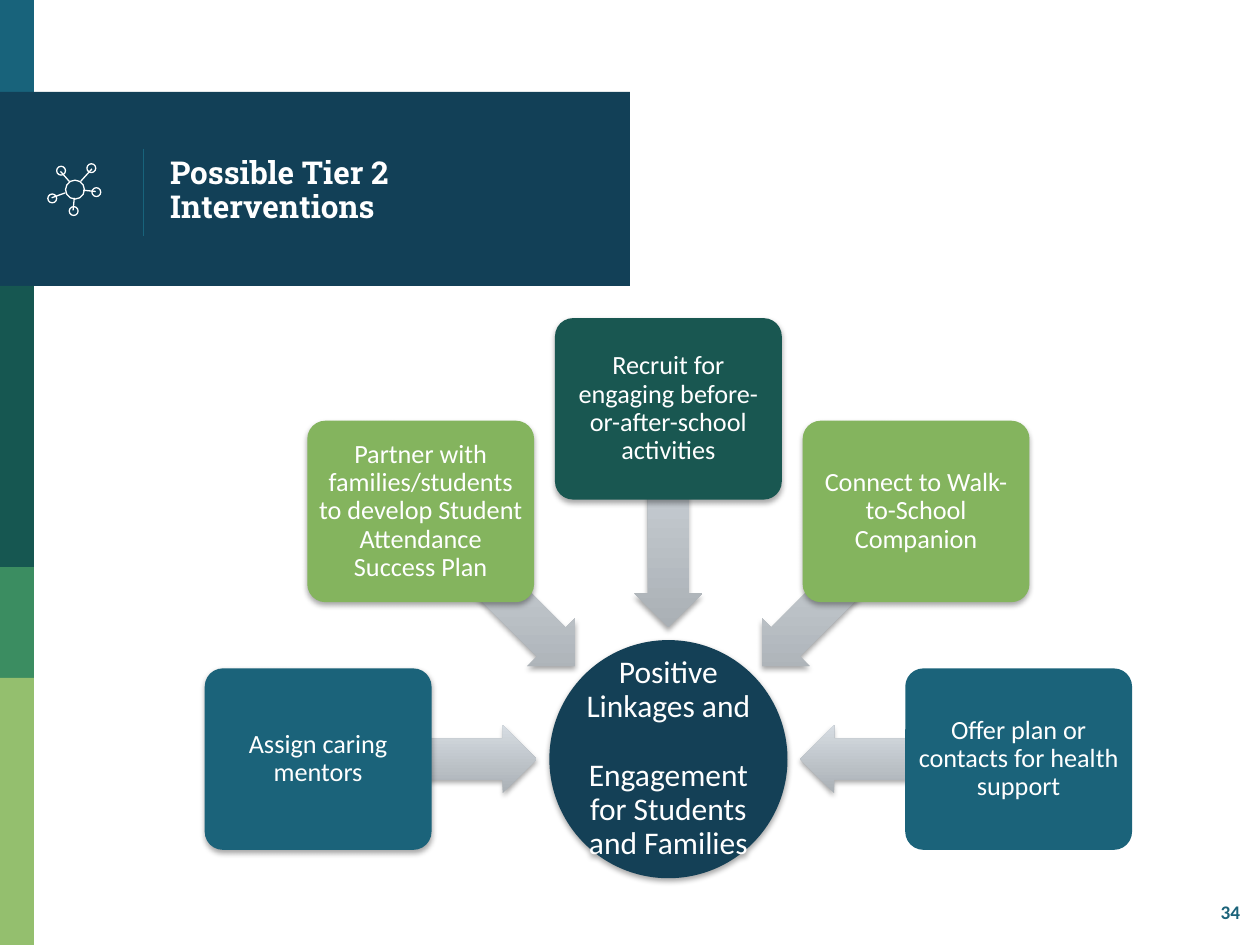
"""Build the slide on possible Tier 2 interventions."""
import math

import lxml.etree
import pptx
import pptx.dml.color
import pptx.enum.shapes
import pptx.enum.text
import pptx.oxml.ns
import pptx.util

Inches = pptx.util.Inches
Kind = pptx.enum.shapes.MSO_SHAPE
Align = pptx.enum.text.PP_ALIGN
Anchor = pptx.enum.text.MSO_ANCHOR
STRAIGHT = pptx.enum.shapes.MSO_CONNECTOR.STRAIGHT

THEME = {
    "navy": "124057", "hub": "144056", "teal": "18637B", "blue": "1B637A",
    "forest": "165751", "pine": "195751", "green": "3B8D61", "lime": "94BF6E",
    "leaf": "84B45E", "white": "FFFFFF", "arrow": ("AAB0B5", "D6DCE2"),
    "body_font": "Calibri", "title_font": "Roboto Slab",
    "large": 18, "medium": 15, "small": 11, "line": 0.75,
}


def rgb(name):
    return pptx.dml.color.RGBColor.from_string(THEME.get(name, name))


def write(shape, paragraphs, size, inset, color="white", font="body_font",
          bold=False, align=Align.CENTER, gap=0):
    frame = shape.text_frame
    frame.text = "\n".join(paragraphs)
    sides = ("left", "right", "top", "bottom")
    frame_format = {f"margin_{side}": Inches(inset) for side in sides}
    frame_format.update(word_wrap=True, vertical_anchor=Anchor.MIDDLE,
                        auto_size=pptx.enum.text.MSO_AUTO_SIZE.NONE)
    for name, value in frame_format.items():
        setattr(frame, name, value)
    font_format = {"name": THEME[font], "size": pptx.util.Pt(THEME[size]), "bold": bold}
    for paragraph in frame.paragraphs:
        paragraph.alignment = align
        paragraph.line_spacing = 0.9
        paragraph.space_after = pptx.util.Pt(gap)
        for run in paragraph.runs:
            for name, value in font_format.items():
                setattr(run.font, name, value)
            run.font.color.rgb = rgb(color)


presentation = pptx.Presentation()
presentation.slide_width = Inches(10)
presentation.slide_height = Inches(7.5)
slide = presentation.slides.add_slide(presentation.slide_layouts[5])
shapes = slide.shapes

bands = [
    (0, 0.27, 0.77, "teal"),
    (0.73, 5, 1.54, "navy"),
    (2.27, 0.27, 2.23, "forest"),
    (4.5, 0.27, 0.88, "green"),
    (5.38, 0.27, 2.12, "lime"),
]
for top, width, height, color in bands:
    band = shapes.add_shape(Kind.RECTANGLE, 0, Inches(top), Inches(width), Inches(height))
    band.shadow.inherit = False
    band.fill.solid()
    band.fill.fore_color.rgb = rgb(color)
    band.line.fill.background()

title = shapes.title
title_place = {"left": 1.25, "top": 0.77, "width": 3.51, "height": 1.5}
for name, value in title_place.items():
    setattr(title, name, Inches(value))
write(title, ["Possible Tier 2 Interventions"], "large", 0.1,
      font="title_font", bold=True, align=Align.LEFT)
title.element.getparent().append(title.element)

number = shapes.add_textbox(Inches(9.59), Inches(7.1), Inches(0.5), Inches(0.29))
write(number, ["34"], "small", 0.1, color="blue", bold=True, align=Align.LEFT)

hub_x, hub_y, hub_size = 5.305, 6.025, 1.89
box_width, box_height, box_radius = 1.8, 1.44, 2.78
arrow_width, arrow_height, arrow_radius = 1.73, 0.54, 1.91
interventions = [
    ("Assign caring mentors", "blue"),
    ("Partner with families/students to develop Student Attendance Success Plan", "leaf"),
    ("Recruit for engaging before-or-after-school activities", "pine"),
    ("Connect to Walk-to-School Companion", "leaf"),
    ("Offer plan or contacts for health support", "blue"),
]
parts = [(Kind.OVAL, 0, 0, hub_size, hub_size, "hub",
          ["Positive Linkages and", "Engagement\vfor Students and Families"])]
for index, (text, color) in enumerate(interventions):
    angle = 180 + 45 * index
    parts.append((Kind.LEFT_ARROW, angle, arrow_radius, arrow_width, arrow_height, "arrow", []))
    parts.append((Kind.ROUNDED_RECTANGLE, angle, box_radius, box_width, box_height, color, [text]))

for kind, angle, radius, width, height, color, paragraphs in parts:
    center_x = hub_x + radius * math.cos(math.radians(angle))
    center_y = hub_y + radius * math.sin(math.radians(angle))
    shape = shapes.add_shape(kind, Inches(center_x - width / 2), Inches(center_y - height / 2),
                             Inches(width), Inches(height))
    shape.line.fill.background()
    if kind == Kind.LEFT_ARROW:
        shape.rotation = angle % 360
        shape.adjustments[0] = 0.6
        shape.adjustments[1] = 0.5
        shape.fill.gradient()
        shape.fill.gradient_angle = 90
        for stop, stop_color in zip(shape.fill.gradient_stops, THEME["arrow"]):
            stop.color.rgb = rgb(stop_color)
        shape.element.spPr.find(pptx.oxml.ns.qn("a:gradFill")).set("rotWithShape", "0")
    else:
        shape.fill.solid()
        shape.fill.fore_color.rgb = rgb(color)
        if kind == Kind.ROUNDED_RECTANGLE:
            shape.adjustments[0] = 0.1
            write(shape, paragraphs, "medium", 0.03)
        else:
            write(shape, paragraphs, "large", 0.01, gap=20)
    shape.shadow.inherit = False
    if paragraphs != [interventions[-1][0]]:
        effects = shape.element.spPr.find(pptx.oxml.ns.qn("a:effectLst"))
        effects.append(pptx.oxml.parse_xml(
            f'<a:outerShdw {pptx.oxml.ns.nsdecls("a")} blurRad="40000" dist="23000" '
            'dir="5400000" rotWithShape="0"><a:srgbClr val="000000">'
            '<a:alpha val="35000"/></a:srgbClr></a:outerShdw>'))

icon_circles = [
    (0.69, 1.3, 0.07), (0.45, 1.32, 0.07), (0.38, 1.54, 0.07),
    (0.55, 1.64, 0.07), (0.73, 1.49, 0.07), (0.52, 1.43, 0.15),
]
for left, top, size in icon_circles:
    circle = shapes.add_shape(Kind.OVAL, Inches(left), Inches(top), Inches(size), Inches(size))
    circle.shadow.inherit = False
    circle.fill.background()
    circle.line.color.rgb = rgb("white")
    circle.line.width = pptx.util.Pt(THEME["line"])

lines = [
    (1.14, 1.18, 1.14, 1.87, "teal"),
    (0.48, 1.36, 0.55, 1.44, "white"),
    (0.64, 1.44, 0.73, 1.34, "white"),
    (0.76, 1.52, 0.66, 1.51, "white"),
    (0.58, 1.67, 0.59, 1.57, "white"),
    (0.41, 1.57, 0.52, 1.53, "white"),
]
for *ends, color in lines:
    connector = shapes.add_connector(STRAIGHT, *map(Inches, ends))
    connector.line.color.rgb = rgb(color)
    connector.line.width = pptx.util.Pt(THEME["line"])
    lxml.etree.SubElement(connector.element.spPr, pptx.oxml.ns.qn("a:effectLst"))

presentation.save("out.pptx")
